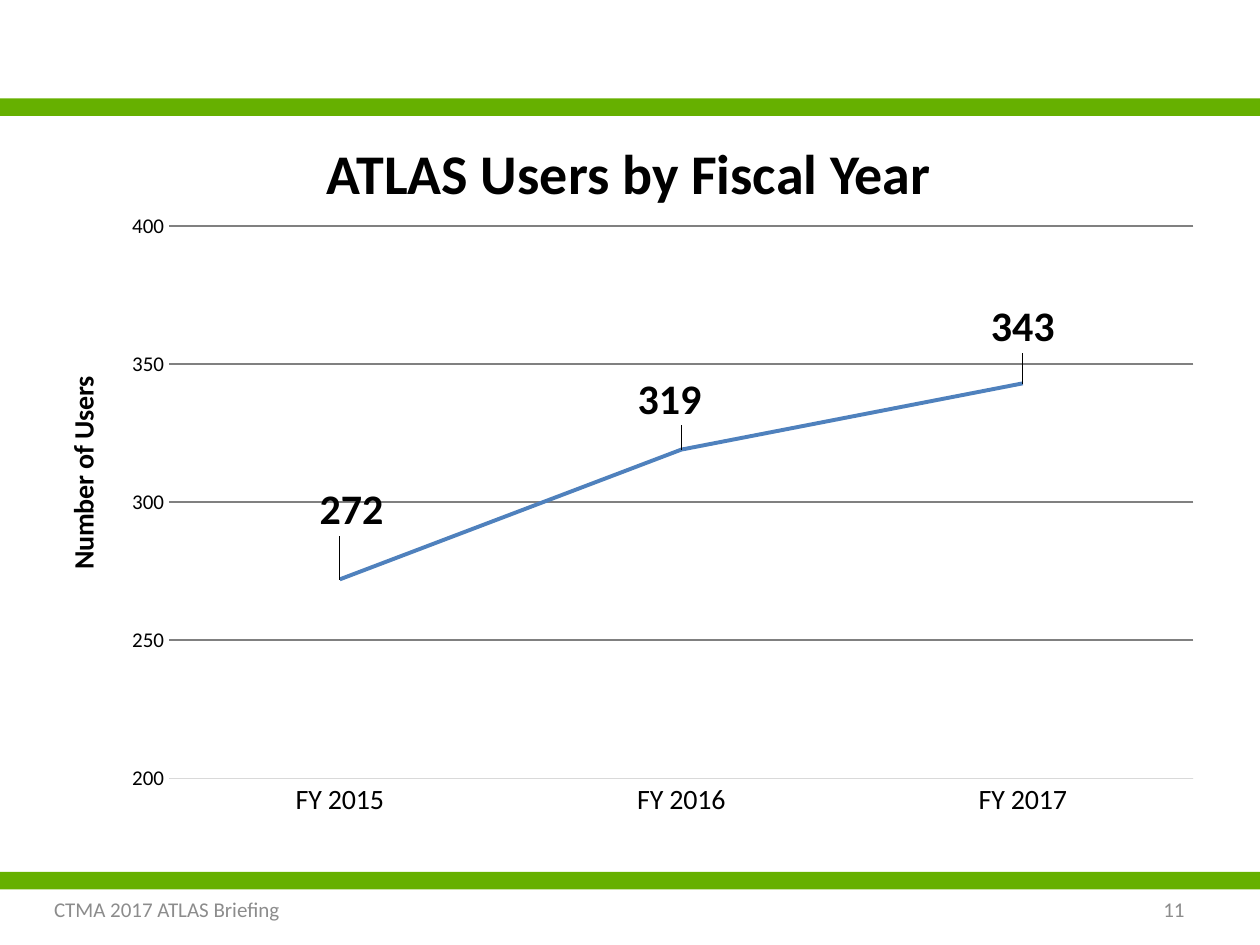
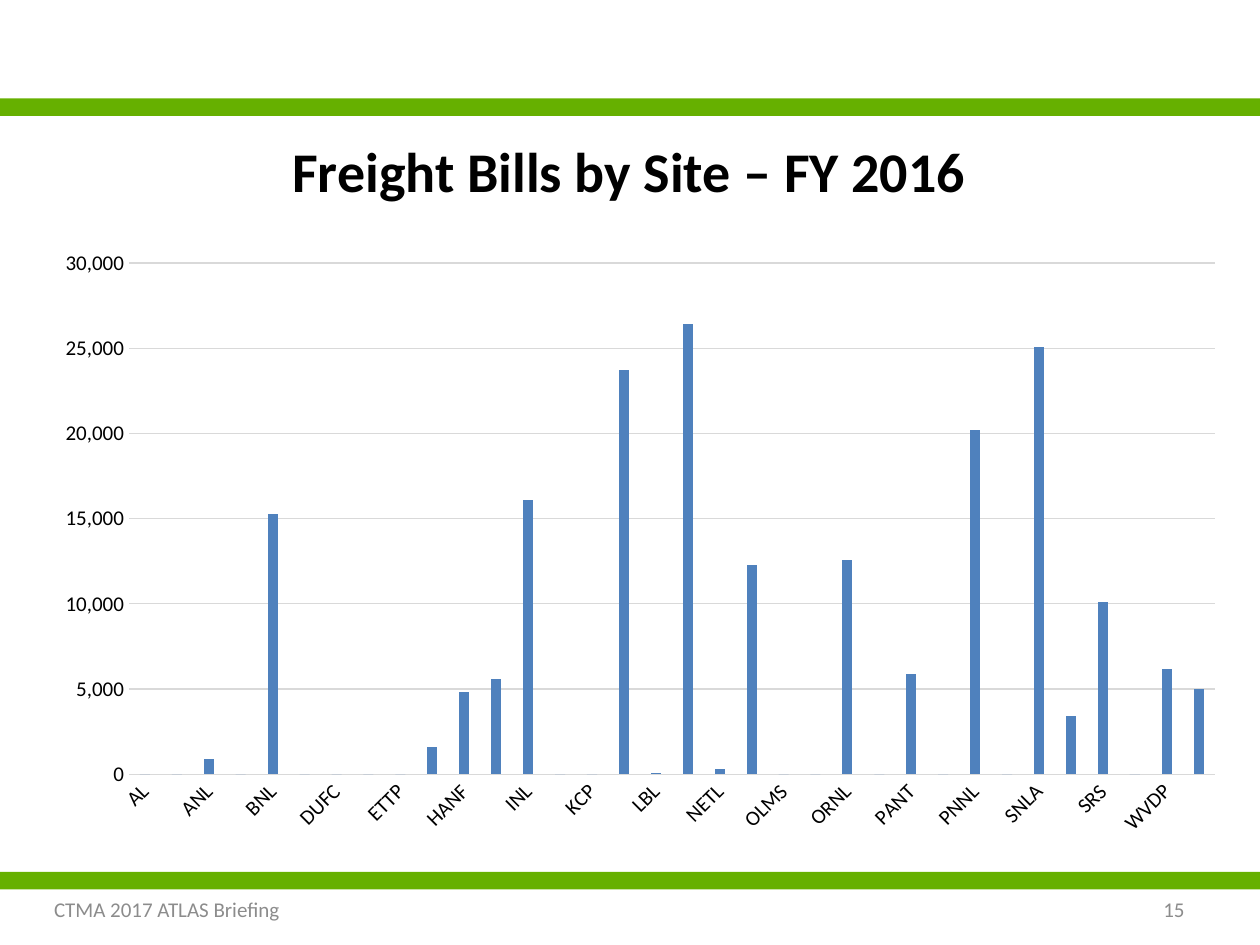
"""Build two ATLAS briefing slides: users by fiscal year and freight bills by site."""
from lxml import etree
from pptx import Presentation
from pptx.chart.data import CategoryChartData
from pptx.dml.color import RGBColor
from pptx.enum import chart as ch, shapes, text
from pptx.oxml import ns
from pptx.util import Pt

GREEN = RGBColor(0x66, 0xB0, 0x00)
BLUE = RGBColor(0x4F, 0x81, 0xBD)
BLACK = RGBColor(0x00, 0x00, 0x00)
FOOTER_GRAY = RGBColor(0x8C, 0x8C, 0x8C)
DARK_GRID = RGBColor(0x80, 0x80, 0x80)
LIGHT_GRID = RGBColor(0xD9, 0xD9, 0xD9)
FONT = "Calibri"
SLIDE_WIDTH, SLIDE_HEIGHT = 720, 540
BAND_TOPS = (56.2, 498.2)
BAND_HEIGHT = 10

USERS = {"FY 2015": 272, "FY 2016": 319, "FY 2017": 343}
USER_LABEL_SHIFTS = ((0.01, -0.06), (-0.01, -0.03), (0, -0.04))
SITES = (
    "AL AMWTP ANL BAPL BNL BPA DUFC DUFX ETTP FNAL HANF ICP INL KAPL KCP LANL LBL "
    "LLNL NETL NNSS OLMS ORISE ORNL PAD PANT PGDP PNNL PPPL SNLA SNLL SRS TWPC WVDP Y-12"
).split()
BILLS = {
    "ANL": 900, "BNL": 15300, "FNAL": 1600, "HANF": 4800, "ICP": 5600, "INL": 16100,
    "LANL": 23700, "LBL": 100, "LLNL": 26400, "NETL": 300, "NNSS": 12300,
    "ORNL": 12600, "PANT": 5900, "PNNL": 20200, "SNLA": 25100, "SNLL": 3400,
    "SRS": 10100, "WVDP": 6200, "Y-12": 5000,
}


def style_font(font, size, color=BLACK, bold=False):
    """Apply the shared typeface with a size, colour and weight."""
    font.name, font.size, font.bold = FONT, Pt(size), bold
    font.color.rgb = color


def add_text(slide, box, words, size, color, align, anchor, bold=False):
    """Add a one-paragraph text box."""
    frame = slide.shapes.add_textbox(*map(Pt, box)).text_frame
    frame.word_wrap = True
    frame.vertical_anchor = anchor
    paragraph = frame.paragraphs[0]
    paragraph.text, paragraph.alignment = words, align
    style_font(paragraph.font, size, color, bold)


def add_band(slide, top):
    """Add a green band across the slide."""
    band = slide.shapes.add_shape(
        shapes.MSO_SHAPE.RECTANGLE, 0, Pt(top), Pt(SLIDE_WIDTH), Pt(BAND_HEIGHT))
    band.shadow.inherit = False
    band.fill.solid()
    band.fill.fore_color.rgb = GREEN
    band.line.fill.background()


def add_briefing_slide(deck, title, title_top, number):
    """Add a blank slide with bands, footer, page number and title."""
    slide = deck.slides.add_slide(deck.slide_layouts[6])
    for top in BAND_TOPS:
        add_band(slide, top)
    align, anchor = text.PP_ALIGN, text.MSO_ANCHOR
    add_text(slide, (516, 505.4, 168, 28.8), str(number), 12, FOOTER_GRAY,
             align.RIGHT, anchor.MIDDLE)
    add_text(slide, (23.8, 505.4, 210, 28.8), "CTMA 2017 ATLAS Briefing", 12,
             FOOTER_GRAY, align.LEFT, anchor.MIDDLE)
    add_text(slide, (5.5, title_top, 708, 62.6), title, 32, BLACK,
             align.CENTER, anchor.TOP, bold=True)
    return slide


def make_layout(**settings):
    """Return a chart layout element with the given manual settings."""
    layout = etree.Element(ns.qn("c:layout"))
    manual = etree.SubElement(layout, ns.qn("c:manualLayout"))
    for tag, value in settings.items():
        etree.SubElement(manual, ns.qn(f"c:{tag}")).set("val", str(value))
    return layout


def replace_layout(parent, layout, position):
    """Put a layout into a chart part in place of any present one."""
    for present in parent.findall(ns.qn("c:layout")):
        parent.remove(present)
    parent.insert(position, layout)


def place_plot(chart, x, y, w, h):
    """Fix the inner plot area as fractions of the chart."""
    layout = make_layout(layoutTarget="inner", xMode="edge", yMode="edge",
                         x=x, y=y, w=w, h=h)
    replace_layout(chart.element.xpath(".//c:plotArea")[0], layout, 0)


def style_axis(axis, size, line_color=None):
    """Style tick labels and the axis line."""
    axis.major_tick_mark = axis.minor_tick_mark = ch.XL_TICK_MARK.NONE
    style_font(axis.tick_labels.font, size)
    if line_color is None:
        axis.format.line.fill.background()
    else:
        axis.format.line.color.rgb = line_color
        axis.format.line.width = Pt(0.75)


def add_series_chart(slide, kind, box, values, category_size, scale, grid_color):
    """Add a single-series chart with styled axes and gridlines."""
    data = CategoryChartData()
    data.categories = list(values)
    data.add_series("Series 1", list(values.values()))
    chart = slide.shapes.add_chart(kind, *map(Pt, box), data).chart
    chart.has_legend = chart.has_title = False
    style_font(chart.font, 12)
    chart.plots[0].vary_by_categories = False
    style_axis(chart.category_axis, category_size, LIGHT_GRID)
    amounts = chart.value_axis
    style_axis(amounts, 12)
    amounts.minimum_scale, amounts.maximum_scale, amounts.major_unit = scale
    amounts.has_major_gridlines = True
    amounts.major_gridlines.format.line.color.rgb = grid_color
    amounts.major_gridlines.format.line.width = Pt(0.75)
    return chart


def label_points(chart, shifts):
    """Show each value in bold above its point, moved by its shift."""
    points = chart.plots[0].series[0].points
    for index, _ in enumerate(shifts):
        label = points[index].data_label
        style_font(label.font, 24, bold=True)
        label.position = ch.XL_LABEL_POSITION.ABOVE
    for label, (x, y) in zip(chart.element.xpath(".//c:dLbl"), shifts):
        replace_layout(label, make_layout(x=x, y=y), 1)


def title_value_axis(chart, words):
    """Add a bold title beside the value axis."""
    axis_title = chart.value_axis.axis_title
    paragraph = axis_title.text_frame.paragraphs[0]
    paragraph.text = words
    style_font(paragraph.font, 16, bold=True)
    layout = make_layout(xMode="edge", yMode="edge", x=0.02, y=0.27)
    replace_layout(chart.element.xpath(".//c:valAx/c:title")[0], layout, 1)


def build_users_slide(deck):
    """Build the line chart of users."""
    slide = add_briefing_slide(deck, "ATLAS Users by Fiscal Year", 75.6, 11)
    chart = add_series_chart(slide, ch.XL_CHART_TYPE.LINE, (20.2, 115.2, 676, 358.6),
                             USERS, 16, (200, 400, 50), DARK_GRID)
    place_plot(chart, 0.113, 0.039, 0.866, 0.88)
    users = chart.plots[0].series[0]
    users.smooth = False
    users.format.line.color.rgb = BLUE
    users.format.line.width = Pt(2.25)
    label_points(chart, USER_LABEL_SHIFTS)
    title_value_axis(chart, "Number of Users")


def build_freight_slide(deck):
    """Build the column chart of freight bills."""
    slide = add_briefing_slide(deck, "Freight Bills by Site – FY 2016", 74.2, 15)
    bills_by_site = {site: BILLS.get(site, 0) for site in SITES}
    chart = add_series_chart(slide, ch.XL_CHART_TYPE.COLUMN_CLUSTERED,
                             (23.8, 136.8, 684, 347.8), bills_by_site, 12,
                             (0, 30000, 5000), LIGHT_GRID)
    place_plot(chart, 0.073, 0.039, 0.907, 0.84)
    chart.plots[0].gap_width, chart.plots[0].overlap = 219, -27
    bills = chart.plots[0].series[0]
    bills.invert_if_negative = False
    bills.format.fill.solid()
    bills.format.fill.fore_color.rgb = BLUE
    labels = chart.value_axis.tick_labels
    labels.number_format, labels.number_format_is_linked = "#,##0", False
    chart.element.xpath(".//c:catAx/c:txPr/a:bodyPr")[0].set("rot", "-2700000")


def main():
    """Build and save the deck."""
    deck = Presentation()
    deck.slide_width, deck.slide_height = Pt(SLIDE_WIDTH), Pt(SLIDE_HEIGHT)
    build_users_slide(deck)
    build_freight_slide(deck)
    deck.save("out.pptx")


if __name__ == "__main__":
    main()
